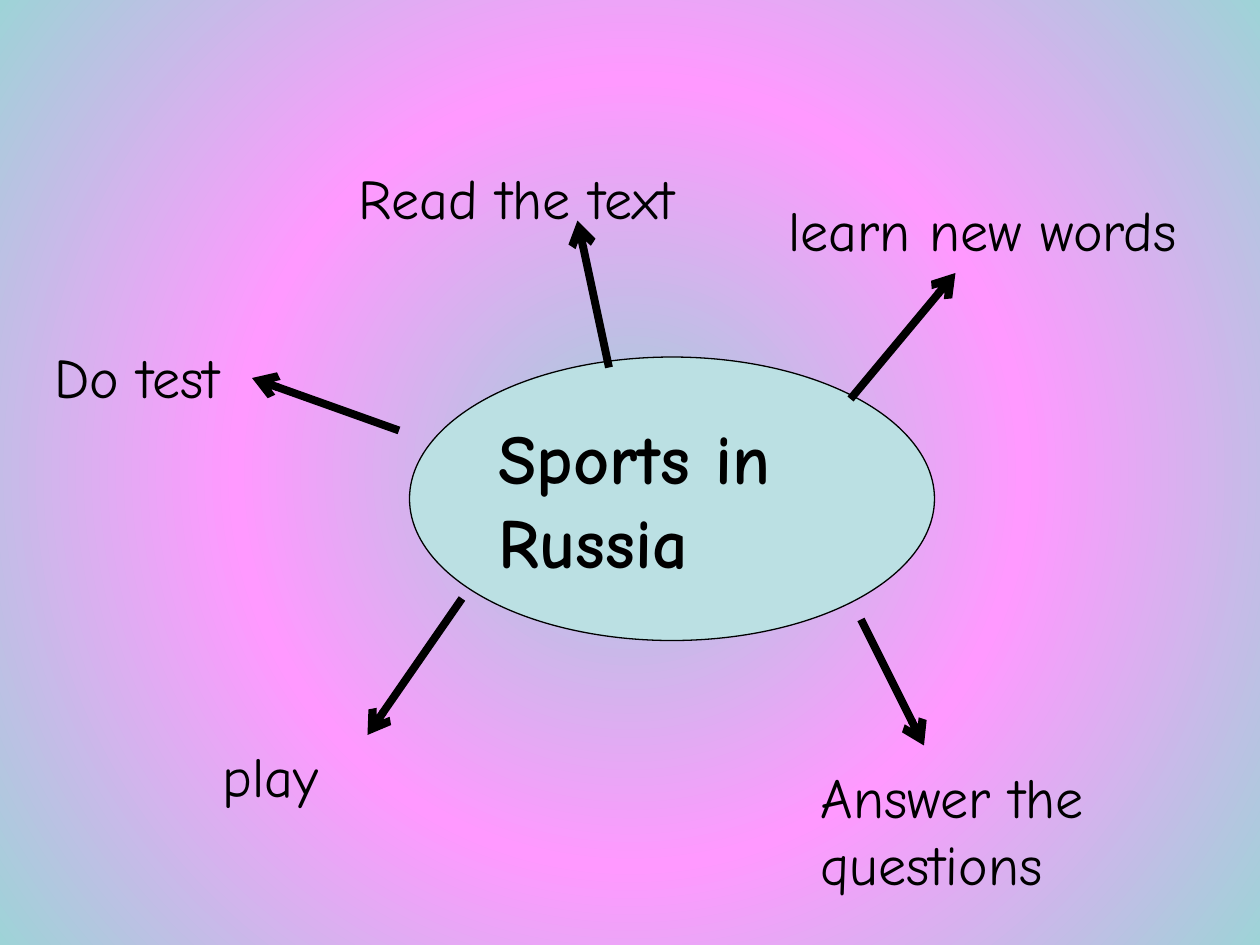
from lxml.etree import SubElement
from pptx import Presentation
from pptx.dml.color import RGBColor
from pptx.enum.shapes import MSO_CONNECTOR, MSO_SHAPE
from pptx.enum.text import MSO_ANCHOR, PP_ALIGN
from pptx.oxml import parse_xml
from pptx.oxml.ns import nsdecls, qn
from pptx.util import Pt

TEAL = RGBColor(0x9E, 0xD3, 0xD7)
PINK = RGBColor(0xFF, 0x99, 0xFF)
PALE_TEAL = RGBColor(0xBB, 0xE0, 0xE3)
BLACK = RGBColor(0, 0, 0)
FONT = "Comic Neue"


def write_text(shape, text, size, bold=False):
    text_frame = shape.text_frame
    text_frame.word_wrap = True
    text_frame.text = text
    paragraph = text_frame.paragraphs[0]
    paragraph.alignment = PP_ALIGN.LEFT
    font = paragraph.runs[0].font
    font.name = FONT
    font.size = Pt(size)
    font.bold = bold
    font.color.rgb = BLACK


presentation = Presentation()
presentation.slide_width = Pt(720)
presentation.slide_height = Pt(540)
slide = presentation.slides.add_slide(presentation.slide_layouts[6])

# Radial background: teal, pink, teal from the centre outwards
slide.background.fill.gradient()
gradient = slide.element.find(".//" + qn("a:gradFill"))
stops = "".join(
    f'<a:gs pos="{position * 1000}"><a:srgbClr val="{color}"/></a:gs>'
    for position, color in [(0, TEAL), (50, PINK), (100, TEAL)]
)
gradient.getparent().replace(gradient, parse_xml(
    f'<a:gradFill {nsdecls("a")} rotWithShape="1"><a:gsLst>{stops}</a:gsLst>'
    '<a:path path="circle">'
    '<a:fillToRect l="50000" t="50000" r="50000" b="50000"/>'
    '</a:path></a:gradFill>'
))

# Central topic
topic = slide.shapes.add_shape(MSO_SHAPE.OVAL, Pt(234), Pt(204), Pt(300), Pt(162))
topic.shadow.inherit = False
topic.fill.solid()
topic.fill.fore_color.rgb = PALE_TEAL
topic.line.color.rgb = BLACK
topic.line.width = Pt(0.75)
topic.text_frame.vertical_anchor = MSO_ANCHOR.MIDDLE
write_text(topic, "Sports in Russia", 40, bold=True)

# Arrows from the topic to the activities: start x, y, end x, y
arrows = [
    (348, 210, 330, 126),
    (264, 342, 210, 420),
    (228, 246, 144, 216),
    (486, 228, 546, 156),
    (492, 354, 528, 426),
]
for ends in arrows:
    arrow = slide.shapes.add_connector(MSO_CONNECTOR.STRAIGHT, *map(Pt, ends))
    arrow.line.color.rgb = BLACK
    arrow.line.width = Pt(4.5)
    SubElement(arrow.line._get_or_add_ln(), qn("a:tailEnd"), type="arrow")
    SubElement(arrow.element.spPr, qn("a:effectLst"))

# Activities: text, left, top, width, height
activities = [
    ("Read the text", 198, 90, 225, 46),
    ("learn new words", 443.5, 108, 276.5, 46),
    ("Answer the questions", 462, 432, 266, 85),
    ("play", 120, 420, 152, 46),
    ("Do test", 24, 192, 168, 46),
]
for text, *box in activities:
    label = slide.shapes.add_textbox(*map(Pt, box))
    write_text(label, text, 32)

presentation.save("out.pptx")
